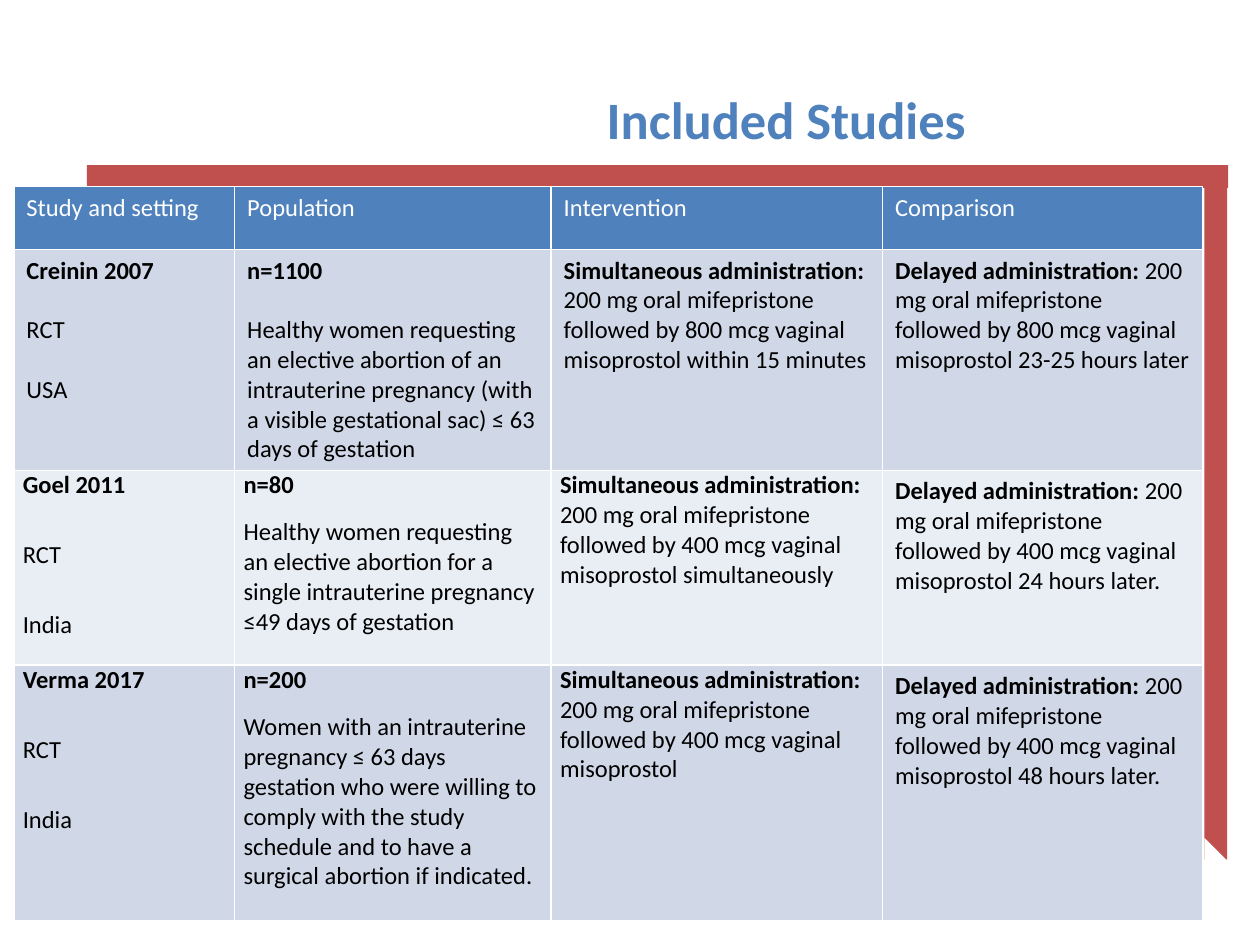
from lxml import etree
from pptx import Presentation
from pptx.dml.color import RGBColor
from pptx.enum.shapes import MSO_SHAPE
from pptx.enum.text import MSO_ANCHOR, PP_ALIGN
from pptx.oxml.ns import qn
from pptx.util import Cm, Pt

RECT = MSO_SHAPE.RECTANGLE
WEDGE = MSO_SHAPE.ISOSCELES_TRIANGLE
BOTTOM = MSO_ANCHOR.BOTTOM
CENTER = PP_ALIGN.CENTER

FONT = "Calibri"
HEX = {"red": "C0504D", "blue": "4F81BD", "white": "FFFFFF",
       "black": "000000", "dark": "D0D8E8", "light": "E9EDF4"}

COLS = [4.45, 6.38, 6.68, 6.45]
ROWS = [1.27, 4.45, 3.93, 5.16]
HEADS = ["Study and setting", "Population", "Intervention", "Comparison"]
SAME = "Simultaneous administration: "
LATE = "Delayed administration: "

STUDIES = [
    {"fill": "dark", "tight": False, "gaps": (17, 17),
     "study": ["Creinin 2007", "RCT", "USA"],
     "people": ["n=1100", "Healthy women requesting an elective abortion of an "
                "intrauterine pregnancy (with a visible gestational sac) "
                "≤ 63 days of gestation"],
     "same": "200 mg oral mifepristone followed by 800 mcg vaginal "
             "misoprostol within 15 minutes",
     "late": "200 mg oral mifepristone followed by 800 mcg vaginal "
             "misoprostol 23-25 hours later"},
    {"fill": "light", "tight": True, "gaps": (23, 10),
     "study": ["Goel 2011", "RCT", "India"],
     "people": ["n=80", "Healthy women requesting an elective abortion for a "
                "single intrauterine pregnancy ≤49 days of gestation"],
     "same": "200 mg oral mifepristone followed by 400 mcg vaginal "
             "misoprostol simultaneously",
     "late": "200 mg oral mifepristone followed by 400 mcg vaginal "
             "misoprostol 24 hours later."},
    {"fill": "dark", "tight": True, "gaps": (23, 10),
     "study": ["Verma 2017", "RCT", "India"],
     "people": ["n=200", "Women with an intrauterine pregnancy ≤ 63 days "
                "gestation who were willing to comply with the study schedule "
                "and to have a surgical abortion if indicated."],
     "same": "200 mg oral mifepristone followed by 400 mcg vaginal misoprostol",
     "late": "200 mg oral mifepristone followed by 400 mcg vaginal "
             "misoprostol 48 hours later."},
]


def tint(name):
    """Return the named colour."""
    return RGBColor.from_string(HEX[name])


def add_run(para, text, size, color, bold=False):
    """Add one styled run to a paragraph."""
    run = para.add_run()
    run.text = text
    font = run.font
    font.name, font.size, font.bold = FONT, Pt(size), bold
    font.color.rgb = tint(color)


def add_block(slide, kind, box, color):
    """Add a plain filled shape."""
    shape = slide.shapes.add_shape(kind, *map(Cm, box))
    shape.shadow.inherit = False
    shape.fill.solid()
    shape.fill.fore_color.rgb = tint(color)
    shape.line.fill.background()
    return shape


def add_title(slide, text):
    """Add the slide heading."""
    box = slide.shapes.add_textbox(Cm(6.38), Cm(0.51), Cm(18.29), Cm(2.64))
    frame = box.text_frame
    frame.word_wrap = True
    frame.vertical_anchor = BOTTOM
    frame.margin_left = Cm(0.91)
    para = frame.paragraphs[0]
    para.alignment = CENTER
    add_run(para, text, 30, "blue", True)


def add_edges(cell):
    """Draw thin white borders round a cell."""
    props = cell._tc.get_or_add_tcPr()
    for spot, side in enumerate(("lnL", "lnR", "lnT", "lnB")):
        line = etree.Element(qn("a:" + side), w=str(Pt(1)))
        fill = etree.SubElement(line, qn("a:solidFill"))
        etree.SubElement(fill, qn("a:srgbClr"), val=HEX["white"])
        props.insert(spot, line)


def fill_cell(cell, paras, fill, color="black", gap=0, tight=False):
    """Fill a cell with paragraphs of (text, bold) runs."""
    cell.fill.solid()
    cell.fill.fore_color.rgb = tint(fill)
    add_edges(cell)
    if tight:
        cell.margin_left = cell.margin_right = Cm(0.18)
        cell.margin_top = cell.margin_bottom = 0
    frame = cell.text_frame
    for num, runs in enumerate(paras):
        para = frame.add_paragraph() if num else frame.paragraphs[0]
        para.space_before = Pt(gap if num else 0)
        for text, bold in runs:
            add_run(para, text, 14, color, bold)


def lead(lines):
    """Make the first line bold and the rest plain."""
    return [[(text, num == 0)] for num, text in enumerate(lines)]


def add_grid(slide):
    """Add the table of studies."""
    shape = slide.shapes.add_table(len(ROWS), len(COLS), Cm(0.28), Cm(3.76),
                                   Cm(sum(COLS)), Cm(sum(ROWS)))
    grid = shape.table
    for col, width in zip(grid.columns, COLS):
        col.width = Cm(width)
    for row, height in zip(grid.rows, ROWS):
        row.height = Cm(height)
    for num, head in enumerate(HEADS):
        fill_cell(grid.cell(0, num), [[(head, False)]], "blue", "white")
    for row, item in enumerate(STUDIES, 1):
        fill, tight = item["fill"], item["tight"]
        for col, key in enumerate(("study", "people")):
            fill_cell(grid.cell(row, col), lead(item[key]), fill,
                      gap=item["gaps"][col], tight=tight)
        fill_cell(grid.cell(row, 2), [[(SAME, True), (item["same"], False)]],
                  fill, tight=tight)
        fill_cell(grid.cell(row, 3), [[(LATE, True), (item["late"], False)]],
                  fill)


def main():
    """Build and save the slide."""
    deck = Presentation()
    deck.slide_width, deck.slide_height = Cm(25.4), Cm(19.05)
    slide = deck.slides.add_slide(deck.slide_layouts[6])
    add_block(slide, RECT, (1.75, 3.33, 23.01, 0.46), "red")
    add_block(slide, RECT, (24.28, 3.33, 0.46, 14), "red")
    wedge = add_block(slide, WEDGE, (24.28, 16.89, 0.46, 0.46), "white")
    wedge.adjustments[0] = 0
    add_title(slide, "Included Studies")
    add_grid(slide)
    deck.save("out.pptx")


if __name__ == "__main__":
    main()
